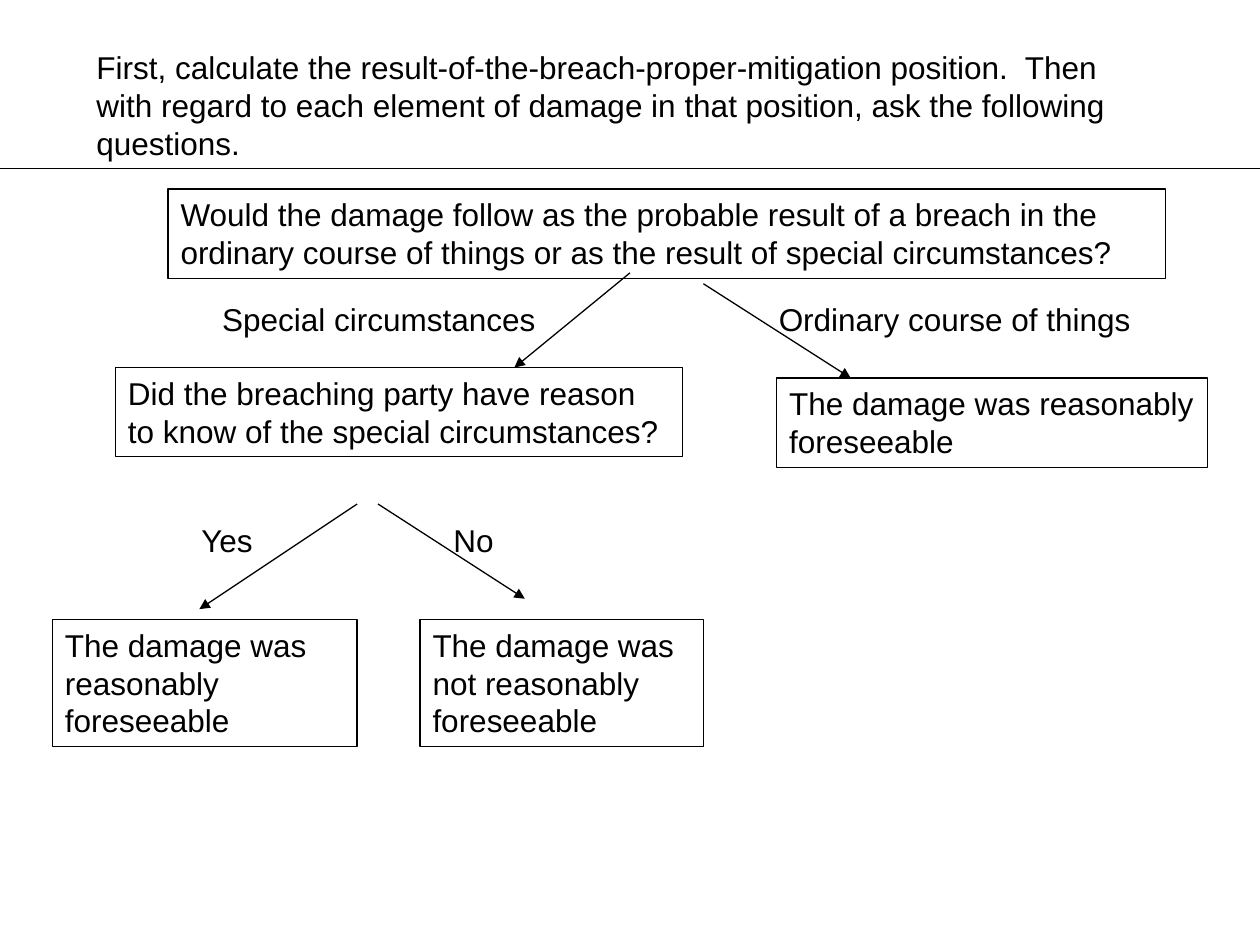
from lxml.etree import SubElement as Sub
from pptx import Presentation as Deck
from pptx.dml.color import RGBColor as Rgb
from pptx.enum.shapes import MSO_CONNECTOR as Link, MSO_SHAPE as Form
from pptx.enum.text import MSO_ANCHOR as Anchor, MSO_AUTO_SIZE as Fit, PP_ALIGN as Align
from pptx.oxml.ns import qn
from pptx.util import Cm, Pt

INK = {"text": "000000", "line": "000000"}


class Chart:
    """Draws the parts of a decision chart on one slide in one style."""

    def __init__(self, slide, font="Arial", size=18, width=0.75):
        self.slide, self.font = slide, font
        self.size, self.width = Pt(size), Pt(width)

    def letter(self, shape, text):
        frame = shape.text_frame
        frame.text = text
        frame.word_wrap = True
        frame.auto_size = Fit.NONE
        frame.vertical_anchor = Anchor.TOP
        par = frame.paragraphs[0]
        par.alignment = Align.LEFT
        par.font.name, par.font.size = self.font, self.size
        par.font.color.rgb = Rgb.from_string(INK["text"])

    def stroke(self, line):
        line.color.rgb = Rgb.from_string(INK["line"])
        line.width = self.width

    def title(self, text, left, top, width, height):
        head = self.slide.shapes.title
        head.left, head.top = Cm(left), Cm(top)
        head.width, head.height = Cm(width), Cm(height)
        self.letter(head, text)

    def label(self, text, left, top, width):
        area = map(Cm, (left, top, width, 1.02))
        self.letter(self.slide.shapes.add_textbox(*area), text)

    def box(self, text, left, top, width, height=1.8):
        area = map(Cm, (left, top, width, height))
        shape = self.slide.shapes.add_shape(Form.RECTANGLE, *area)
        shape.shadow.inherit = False
        shape.fill.background()
        self.stroke(shape.line)
        self.letter(shape, text)

    def line(self, *ends, arrow=False):
        link = self.slide.shapes.add_connector(Link.STRAIGHT, *map(Cm, ends))
        self.stroke(link.line)
        props = link._element.spPr
        if arrow:
            Sub(props.find(qn("a:ln")), qn("a:tailEnd"), type="triangle")
        Sub(props, qn("a:effectLst"))


def main():
    deck = Deck()
    deck.slide_width, deck.slide_height = Cm(25.4), Cm(19.05)
    chart = Chart(deck.slides.add_slide(deck.slide_layouts[5]))

    chart.title(
        "First, calculate the result-of-the-breach-proper-mitigation position.  "
        "Then with regard to each element of damage in that position, ask the "
        "following questions.", 1.69, 0.85, 21.17, 2.54)
    chart.line(0, 3.39, 25.4, 3.39)

    good = "The damage was reasonably foreseeable"
    bad = "The damage was not reasonably foreseeable"
    chart.box(
        "Would the damage follow as the probable result of a breach in the "
        "ordinary course of things or as the result of special circumstances?",
        3.39, 3.81, 20.11)
    chart.box(
        "Did the breaching party have reason to know of the special "
        "circumstances?", 2.33, 7.41, 11.43)
    chart.box(good, 15.66, 7.62, 8.69)
    chart.box(good, 1.06, 12.49, 6.14, 2.56)
    chart.box(bad, 8.47, 12.49, 5.72, 2.56)

    for ends in (
        (12.7, 5.5, 10.37, 7.41),
        (14.18, 5.72, 17.15, 7.62),
        (7.2, 10.16, 4.02, 12.28),
        (7.62, 10.16, 10.58, 12.07),
    ):
        chart.line(*ends, arrow=True)

    for text, left, top, width in (
        ("Special circumstances", 4.23, 5.93, 7.2),
        ("Ordinary course of things", 15.45, 5.93, 7.62),
        ("Yes", 3.81, 10.37, 1.9),
        ("No", 8.89, 10.37, 1.69),
    ):
        chart.label(text, left, top, width)

    deck.save("out.pptx")


if __name__ == "__main__":
    main()
